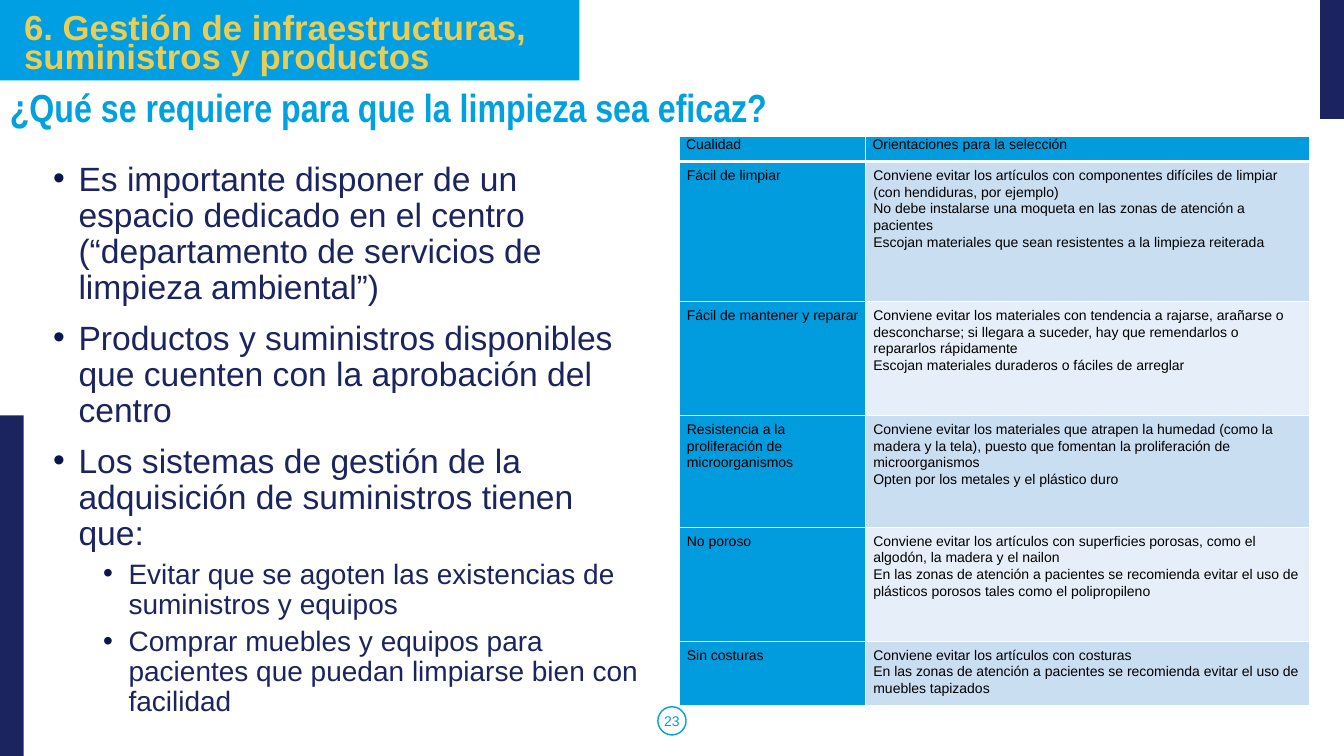
import pptx
import pptx.util
import pptx.dml.color
import pptx.enum.shapes
import pptx.enum.text
import pptx.oxml
import pptx.oxml.ns

Cm = pptx.util.Cm
Pt = pptx.util.Pt
RGBColor = pptx.dml.color.RGBColor
SHAPE = pptx.enum.shapes.MSO_SHAPE
ANCHOR = pptx.enum.text.MSO_ANCHOR
ALIGN = pptx.enum.text.PP_ALIGN

BLUE = RGBColor(0x00, 0x9E, 0xE3)
NAVY = RGBColor(0x1C, 0x24, 0x5F)
YELLOW = RGBColor(0xEA, 0xCD, 0x54)
TITLE_BLUE = RGBColor(0x00, 0xA1, 0xDF)
BULLET = RGBColor(0x09, 0x16, 0x4D)
TABLE_BLUE = RGBColor(0x00, 0x9C, 0xDE)
BAND_DARK = RGBColor(0xCA, 0xDE, 0xF2)
BAND_LIGHT = RGBColor(0xE6, 0xEF, 0xF9)
BLACK = RGBColor(0x00, 0x00, 0x00)
WHITE = RGBColor(0xFF, 0xFF, 0xFF)

# Left, top, width, height in cm
BARS = [
    (BLUE, (0, 0, 14.6, 2.03)),
    (NAVY, (0, 10.47, 0.6, 8.58)),
    (NAVY, (33.27, 0, 0.6, 3)),
]

# Level and wording
POINTS = [
    (0, "Es importante disponer de un espacio dedicado en el centro "
        "(“departamento de servicios de limpieza ambiental”)"),
    (0, "Productos y suministros disponibles que cuenten con la aprobación del centro"),
    (0, "Los sistemas de gestión de la adquisición de suministros tienen que:"),
    (1, "Evitar que se agoten las existencias de suministros y equipos"),
    (1, "Comprar muebles y equipos para pacientes que puedan limpiarse bien con facilidad"),
]
# Per level: text size, left indent in cm, space before
LEVELS = [(24, 0.64, 10), (20, 1.9, 5)]

# Row height in cm, quality, guidance
ROWS = [
    (0.64, "Cualidad", ["Orientaciones para la selección"]),
    (3.53, "Fácil de limpiar", [
        "Conviene evitar los artículos con componentes difíciles de limpiar "
        "(con hendiduras, por ejemplo)",
        "No debe instalarse una moqueta en las zonas de atención a pacientes",
        "Escojan materiales que sean resistentes a la limpieza reiterada"]),
    (2.87, "Fácil de mantener y reparar", [
        "Conviene evitar los materiales con tendencia a rajarse, arañarse o desconcharse; "
        "si llegara a suceder, hay que remendarlos o repararlos rápidamente",
        "Escojan materiales duraderos o fáciles de arreglar"]),
    (2.82, "Resistencia a la proliferación de microorganismos", [
        "Conviene evitar los materiales que atrapen la humedad (como la madera y la tela), "
        "puesto que fomentan la proliferación de microorganismos",
        "Opten por los metales y el plástico duro"]),
    (2.87, "No poroso", [
        "Conviene evitar los artículos con superficies porosas, como el algodón, "
        "la madera y el nailon",
        "En las zonas de atención a pacientes se recomienda evitar el uso de "
        "plásticos porosos tales como el polipropileno"]),
    (1.57, "Sin costuras", [
        "Conviene evitar los artículos con costuras",
        "En las zonas de atención a pacientes se recomienda evitar el uso de "
        "muebles tapizados"]),
]
COLUMNS = [4.7, 11.18]


def set_all(obj, values):
    for name, value in values.items():
        setattr(obj, name, value)


def add_text(p, text, color, size, name="Arial", bold=False, **para):
    r = p.add_run()
    r.text = text
    set_all(r.font, {"name": name, "size": Pt(size), "bold": bold})
    r.font.color.rgb = color
    set_all(p, para)


def add_box(s, box, anchor=ANCHOR.TOP):
    tf = s.shapes.add_textbox(*map(Cm, box)).text_frame
    set_all(tf, {"word_wrap": True, "vertical_anchor": anchor})
    return tf


def add_shape(s, kind, box, fill=None, line=None):
    sp = s.shapes.add_shape(kind, *map(Cm, box))
    sp.shadow.inherit = False
    if fill is None:
        sp.fill.background()
    else:
        sp.fill.solid()
        sp.fill.fore_color.rgb = fill
    if line is None:
        sp.line.fill.background()
    else:
        sp.line.color.rgb = line
        sp.line.width = Pt(1)


def add_bullet(p, left):
    pPr = p._p.get_or_add_pPr()
    pPr.set("marL", str(Cm(left)))
    pPr.set("indent", str(-Cm(0.64)))
    ns = pptx.oxml.ns.nsdecls("a")
    for xml in (f'<a:buClr {ns}><a:srgbClr val="{BULLET}"/></a:buClr>',
                f'<a:buFont {ns} typeface="Arial"/>',
                f'<a:buChar {ns} char="•"/>'):
        pPr.append(pptx.oxml.parse_xml(xml))


def add_points(s, box):
    tf = add_box(s, box)
    for i, (level, text) in enumerate(POINTS):
        p = tf.add_paragraph() if i else tf.paragraphs[0]
        size, left, before = LEVELS[level]
        add_text(p, text, NAVY, size, level=level, line_spacing=0.9,
                 space_before=Pt(before if i else 0))
        add_bullet(p, left)


def add_borders(cell, widths):
    ns = pptx.oxml.ns.nsdecls("a")
    tcPr = cell._tc.get_or_add_tcPr()
    for i, (side, width) in enumerate(widths.items()):
        tcPr.insert(i, pptx.oxml.parse_xml(
            f'<a:ln{side} {ns} w="{Pt(width)}"><a:solidFill>'
            f'<a:srgbClr val="{WHITE}"/></a:solidFill></a:ln{side}>'))


def fill_cell(cell, texts, fill, row):
    side, edge = (0.13, 0.13) if row else (0.17, 0)
    side = 0.19 if row else side
    set_all(cell, {"margin_left": Cm(side), "margin_right": Cm(side),
                   "margin_top": Cm(edge), "margin_bottom": Cm(edge)})
    cell.fill.solid()
    cell.fill.fore_color.rgb = fill
    tf = cell.text_frame
    for i, text in enumerate(texts):
        p = tf.add_paragraph() if i else tf.paragraphs[0]
        add_text(p, text, BLACK, 10, line_spacing=1.07)
    # Thick rule between the header and the first row
    add_borders(cell, {"L": 1, "R": 1, "T": 3 if row == 1 else 1,
                       "B": 3 if row == 0 else 1})


def add_table(s, left, top):
    height = sum(row[0] for row in ROWS)
    table = s.shapes.add_table(len(ROWS), len(COLUMNS), Cm(left), Cm(top),
                               Cm(sum(COLUMNS)), Cm(height)).table
    for column, width in zip(table.columns, COLUMNS):
        column.width = Cm(width)
    for i, (height, quality, guidance) in enumerate(ROWS):
        table.rows[i].height = Cm(height)
        band = BAND_DARK if i % 2 else BAND_LIGHT
        fill_cell(table.cell(i, 0), [quality], TABLE_BLUE, i)
        fill_cell(table.cell(i, 1), guidance, band if i else TABLE_BLUE, i)


def main():
    prs = pptx.Presentation()
    set_all(prs, {"slide_width": Cm(33.87), "slide_height": Cm(19.05)})
    s = prs.slides.add_slide(prs.slide_layouts[6])

    # Colour bars and page number ring
    for color, box in BARS:
        add_shape(s, SHAPE.RECTANGLE, box, fill=color)
    add_shape(s, SHAPE.OVAL, (16.58, 17.81, 0.71, 0.71), line=BLUE)

    # Section heading and title
    tf = add_box(s, (0.36, 0.3, 13.41, 1.75))
    add_text(tf.paragraphs[0], "6. Gestión de infraestructuras, suministros y productos",
             YELLOW, 24.8, bold=True, line_spacing=0.7)
    tf = add_box(s, (0, 1.98, 20.6, 1.45))
    add_text(tf.paragraphs[0], "¿Qué se requiere para que la limpieza sea eficaz?",
             TITLE_BLUE, 28, name="Arial Narrow", bold=True)

    # Bullet list, page number and table
    add_points(s, (1.09, 3.96, 15.34, 12.93))
    tf = add_box(s, (0, 17.65, 33.87, 1.02), ANCHOR.MIDDLE)
    add_text(tf.paragraphs[0], "23", BLUE, 10, alignment=ALIGN.CENTER)
    add_table(s, 17.12, 3.43)

    prs.save("out.pptx")


if __name__ == "__main__":
    main()
